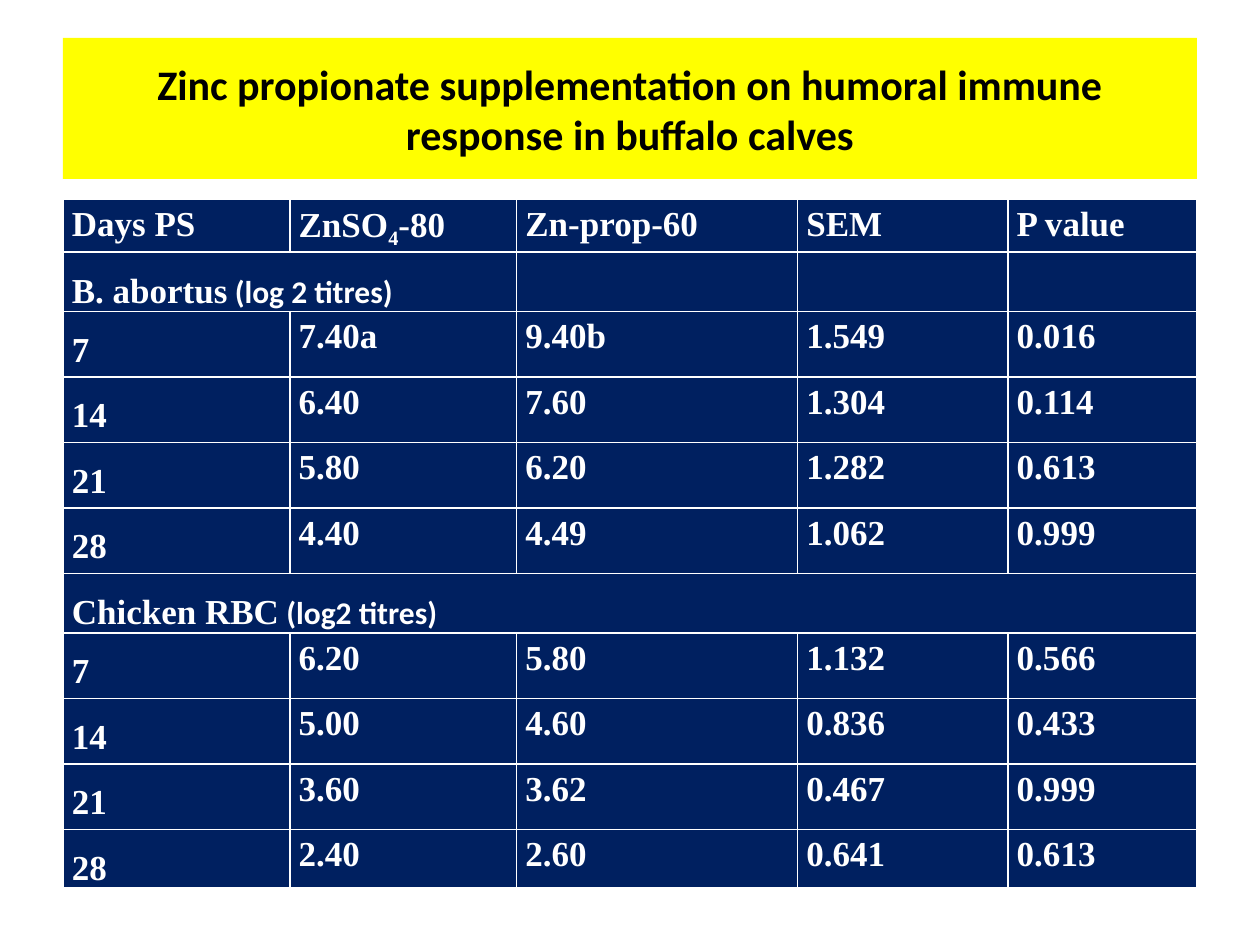
from pptx import Presentation
from pptx.dml.color import RGBColor
from pptx.enum import shapes, text
from pptx.util import Inches, Pt

YELLOW = RGBColor(0xFF, 0xFF, 0x00)
NAVY = RGBColor(0x00, 0x20, 0x60)
WHITE = RGBColor(0xFF, 0xFF, 0xFF)
BLACK = RGBColor(0x00, 0x00, 0x00)
SERIF, SANS = "Times New Roman", "Calibri"

# Content
TITLE = "Zinc propionate supplementation on humoral immune response in buffalo calves"
HEADER = ["Days PS", "ZnSO4-80", "Zn-prop-60", "SEM", "P value"]
# Each group: name, unit, number of columns its heading spans, rows
GROUPS = [
    ("B. abortus", " (log 2 titres)", 2, [
        ["7", "7.40a", "9.40b", "1.549", "0.016"],
        ["14", "6.40", "7.60", "1.304", "0.114"],
        ["21", "5.80", "6.20", "1.282", "0.613"],
        ["28", "4.40", "4.49", "1.062", "0.999"],
    ]),
    ("Chicken RBC", " (log2 titres)", 5, [
        ["7", "6.20", "5.80", "1.132", "0.566"],
        ["14", "5.00", "4.60", "0.836", "0.433"],
        ["21", "3.60", "3.62", "0.467", "0.999"],
        ["28", "2.40", "2.60", "0.641", "0.613"],
    ]),
]
COLUMN_WIDTHS = [1.8, 1.8, 2.23, 1.67, 1.5]
ROW_HEIGHTS = [0.42, 0.45] + [0.52] * 4 + [0.47] + [0.52] * 3 + [0.46]


def set_font(font, size, name, color):
    font.size, font.name, font.bold = Pt(size), name, True
    font.color.rgb = color


def write_cell(cell, *pieces, spacing=1.15):
    """Write pieces as runs of one paragraph; return the runs."""
    para = cell.text_frame.paragraphs[0]
    para.line_spacing = spacing
    set_font(para.font, 20, SERIF, WHITE)
    spans = []
    for piece in pieces:
        span = para.add_run()
        span.text = piece
        set_font(span.font, 20, SERIF, WHITE)
        spans.append(span)
    return spans


deck = Presentation()
deck.slide_width, deck.slide_height = Inches(10), Inches(7.5)
slide = deck.slides.add_slide(deck.slide_layouts[6])

# Title band
band = slide.shapes.add_shape(shapes.MSO_SHAPE.RECTANGLE,
                              Inches(0.5), Inches(0.3), Inches(9), Inches(1.12))
band.shadow.inherit = False
band.fill.solid()
band.fill.fore_color.rgb = YELLOW
band.line.fill.background()
frame = band.text_frame
frame.word_wrap = True
frame.vertical_anchor = text.MSO_ANCHOR.MIDDLE
frame.text = TITLE
frame.paragraphs[0].alignment = text.PP_ALIGN.CENTER
set_font(frame.paragraphs[0].font, 24, SANS, BLACK)

# Table grid; the default table style draws the white rules
table = slide.shapes.add_table(len(ROW_HEIGHTS), len(COLUMN_WIDTHS),
                               Inches(0.5), Inches(1.58), Inches(sum(COLUMN_WIDTHS)),
                               Inches(sum(ROW_HEIGHTS))).table
table.horz_banding = False
for column, width in zip(table.columns, COLUMN_WIDTHS):
    column.width = Inches(width)
for row, height in zip(table.rows, ROW_HEIGHTS):
    row.height = Inches(height)
for cell in table.iter_cells():
    cell.fill.solid()
    cell.fill.fore_color.rgb = NAVY
    cell.margin_left = cell.margin_right = Inches(0.07)
    cell.margin_top = cell.margin_bottom = 0

# Header row, with the formula's digit as a subscript
for index, label in enumerate(HEADER):
    before, digit, after = label.partition("4")
    spans = write_cell(table.cell(0, index), *filter(None, (before, digit, after)))
    if digit:
        spans[1].font._element.set("baseline", "-25000")

# Group headings and their rows
row_index = 1
for name, unit, columns, records in GROUPS:
    heading = table.cell(row_index, 0)
    heading.merge(table.cell(row_index, columns - 1))
    unit_span = write_cell(heading, name, unit, spacing=1.5)[1]
    set_font(unit_span.font, 18, SANS, WHITE)
    for row_index, record in enumerate(records, row_index + 1):
        for index, value in enumerate(record):
            write_cell(table.cell(row_index, index), value,
                       spacing=1.15 if index else 1.5)
    row_index += 1

deck.save("out.pptx")
